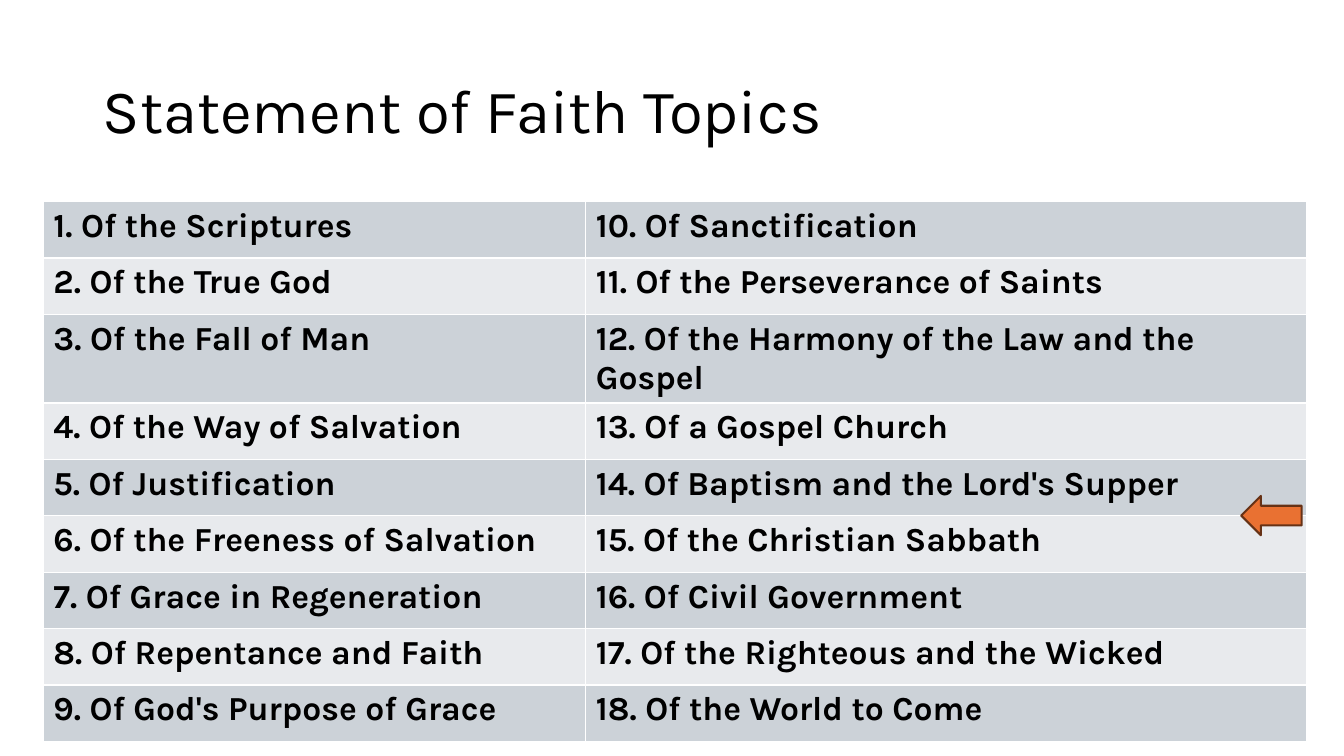
from dataclasses import dataclass

from lxml import etree
from pptx import Presentation
from pptx.dml.color import RGBColor
from pptx.enum.shapes import MSO_SHAPE
from pptx.enum.text import MSO_ANCHOR, MSO_AUTO_SIZE, PP_ALIGN
from pptx.oxml.ns import qn
from pptx.util import Inches, Pt

LEFT = PP_ALIGN.LEFT
MIDDLE, TOP = MSO_ANCHOR.MIDDLE, MSO_ANCHOR.TOP
NO_AUTOFIT = MSO_AUTO_SIZE.NONE
RIGHT_ARROW = MSO_SHAPE.RIGHT_ARROW

SLIDE_WIDTH, SLIDE_HEIGHT = 13.33, 7.5
FONT = "Karla"
BLACK, WHITE = "000000", "FFFFFF"
BANDS = ("CCD2D8", "E8EAED")
ORANGE, BROWN = "E97132", "663216"

COLUMN_WIDTHS = (5.38, 7.15)
ROW_HEIGHT, TALL_ROW_HEIGHT = 0.56, 0.62
TALL_ROW = 2
TOPICS = (
    "the Scriptures", "the True God", "the Fall of Man",
    "the Way of Salvation", "Justification", "the Freeness of Salvation",
    "Grace in Regeneration", "Repentance and Faith", "God's Purpose of Grace",
    "Sanctification", "the Perseverance of Saints",
    "the Harmony of the Law and the Gospel", "a Gospel Church",
    "Baptism and the Lord's Supper", "the Christian Sabbath",
    "Civil Government", "the Righteous and the Wicked", "the World to Come",
)
ROW_COUNT = len(TOPICS) // len(COLUMN_WIDTHS)


@dataclass(frozen=True)
class Box:
    left: float
    top: float
    width: float
    height: float

    def emu(self) -> tuple:
        return tuple(Inches(v) for v in (self.left, self.top, self.width, self.height))


@dataclass(frozen=True)
class Topic:
    row: int
    column: int
    label: str


TITLE_BOX = Box(0.92, 0.4, 11.5, 1.45)
TABLE_BOX = Box(0.43, 2, sum(COLUMN_WIDTHS), ROW_HEIGHT * (ROW_COUNT - 1) + TALL_ROW_HEIGHT)
ARROW_BOX = Box(12.31, 4.92, 0.6, 0.39)


def color(value: str) -> RGBColor:
    return RGBColor.from_string(value)


def style_paragraph(paragraph, size: float, bold: bool) -> None:
    paragraph.alignment = LEFT
    paragraph.font.name = FONT
    paragraph.font.size = Pt(size)
    paragraph.font.bold = bold
    paragraph.font.color.rgb = color(BLACK)


def add_borders(cell) -> None:
    properties = cell._tc.get_or_add_tcPr()
    for index, side in enumerate(("a:lnL", "a:lnR", "a:lnT", "a:lnB")):
        border = etree.Element(qn(side), w=str(Pt(1)))
        fill = etree.SubElement(border, qn("a:solidFill"))
        etree.SubElement(fill, qn("a:srgbClr"), val=WHITE)
        properties.insert(index, border)


def add_title(slide) -> None:
    title = slide.shapes.title
    title.left, title.top, title.width, title.height = TITLE_BOX.emu()
    frame = title.text_frame
    frame.text = "Statement of Faith Topics"
    frame.word_wrap = True
    frame.auto_size = NO_AUTOFIT
    frame.vertical_anchor = MIDDLE
    style_paragraph(frame.paragraphs[0], 44, False)
    frame.paragraphs[0].line_spacing = 0.9


def add_topic(table, topic: Topic) -> None:
    cell = table.cell(topic.row, topic.column)
    cell.text = topic.label
    cell.vertical_anchor = TOP
    cell.fill.solid()
    cell.fill.fore_color.rgb = color(BANDS[topic.row % len(BANDS)])
    style_paragraph(cell.text_frame.paragraphs[0], 24, True)
    add_borders(cell)


def add_topics_table(slide) -> None:
    table = slide.shapes.add_table(ROW_COUNT, len(COLUMN_WIDTHS), *TABLE_BOX.emu()).table
    table.first_row = False
    for column, width in zip(table.columns, COLUMN_WIDTHS):
        column.width = Inches(width)
    for index, row in enumerate(table.rows):
        row.height = Inches(TALL_ROW_HEIGHT if index == TALL_ROW else ROW_HEIGHT)
    # Topics run down the first column, then down the second
    for index, subject in enumerate(TOPICS):
        column, row = divmod(index, ROW_COUNT)
        add_topic(table, Topic(row, column, f"{index + 1}. Of {subject}"))


def add_marker_arrow(slide) -> None:
    arrow = slide.shapes.add_shape(RIGHT_ARROW, *ARROW_BOX.emu())
    arrow.rotation = 180
    arrow.shadow.inherit = False
    arrow.fill.solid()
    arrow.fill.fore_color.rgb = color(ORANGE)
    arrow.line.color.rgb = color(BROWN)
    arrow.line.width = Pt(1.5)


def main() -> None:
    deck = Presentation()
    deck.slide_width, deck.slide_height = Inches(SLIDE_WIDTH), Inches(SLIDE_HEIGHT)
    slide = deck.slides.add_slide(deck.slide_layouts.get_by_name("Title Only"))

    # Heading, numbered topics, and the arrow marking the current topic
    add_title(slide)
    add_topics_table(slide)
    add_marker_arrow(slide)
    deck.save("out.pptx")


if __name__ == "__main__":
    main()
